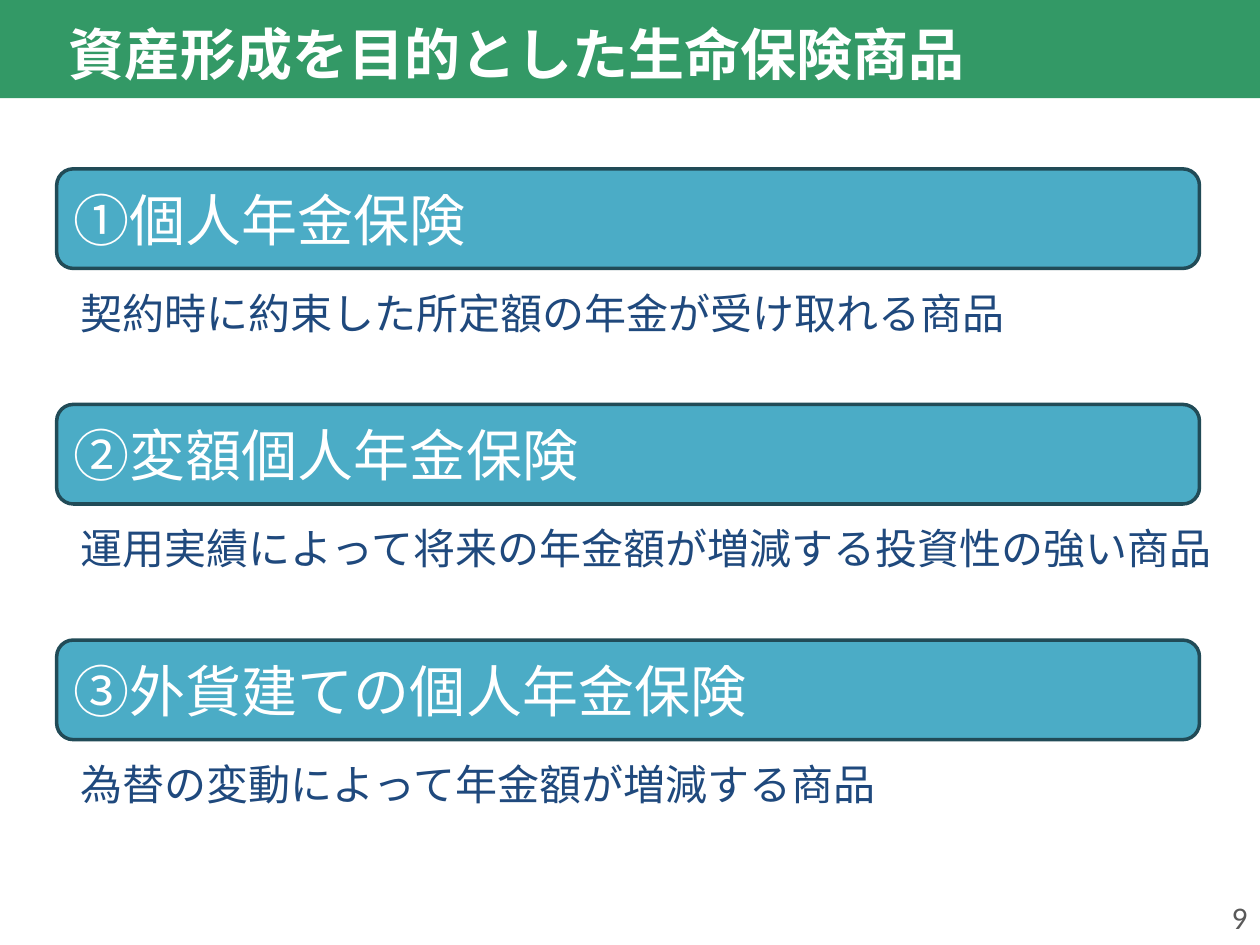
from dataclasses import dataclass

from lxml import etree
from pptx import Presentation
from pptx import util as u
from pptx.dml.color import RGBColor
from pptx.enum import shapes, text
from pptx.oxml.ns import qn

WIDE, HIGH = 10, 7.5
SANS = "Noto Sans CJK JP"
LEFT, TOP, STEP = 0.45, 1.34, 1.87  # left edge, first row, row pitch
BAR_W, BAR_H = 9.07, 0.79


@dataclass
class Box:
    x: float
    y: float
    w: float
    h: float

    def emu(self) -> list:
        return [u.Inches(v) for v in (self.x, self.y, self.w, self.h)]


@dataclass
class Item:
    head: str
    note: str
    note_w: float


ITEMS = [
    Item("①個人年金保険", "契約時に約束した所定額の年金が受け取れる商品", 9.37),
    Item("②変額個人年金保険", "運用実績によって将来の年金額が増減する投資性の強い商品", 9.91),
    Item("③外貨建ての個人年金保険", "為替の変動によって年金額が増減する商品", 9.91),
]

HEAD = {"size": u.Pt(32), "bold": False, "name": SANS}
TITLE = {**HEAD, "bold": True}
NOTE = {**HEAD, "size": u.Pt(24)}
PAGE = {**HEAD, "size": u.Pt(18), "name": "Calibri"}


def paint(target, tone: str) -> None:
    """Give a fill, or the fill of a line, one solid colour."""
    target.solid()
    target.fore_color.rgb = RGBColor.from_string(tone)


def write(shape, words: str, form: dict, tone: str,
          align=text.PP_ALIGN.LEFT, anchor=text.MSO_ANCHOR.MIDDLE) -> None:
    frame = shape.text_frame
    frame.word_wrap = True
    frame.vertical_anchor = anchor
    para = frame.paragraphs[0]
    para.alignment = align
    run = para.add_run()
    run.text = words
    paint(run.font.fill, tone)
    for key, value in form.items():
        setattr(run.font, key, value)
    # East Asian typeface follows the Latin one
    etree.SubElement(run.font._element, qn("a:ea"), typeface=form["name"])


def block(slide, kind, box: Box, tone: str, edge: str = ""):
    shape = slide.shapes.add_shape(kind, *box.emu())
    shape.shadow.inherit = False
    paint(shape.fill, tone)
    if edge:
        paint(shape.line.fill, edge)
        shape.line.width = u.Pt(2)
    else:
        shape.line.fill.background()
    return shape


def label(slide, box: Box, words: str, form: dict, tone: str, **place) -> None:
    write(slide.shapes.add_textbox(*box.emu()), words, form, tone, **place)


def draw(slide, row: int, item: Item) -> None:
    """One rounded heading bar with its note below."""
    y = TOP + row * STEP
    bar = block(slide, shapes.MSO_SHAPE.ROUNDED_RECTANGLE,
                Box(LEFT, y, BAR_W, BAR_H), "4BACC6", "214B57")
    write(bar, item.head, HEAD, "FFFFFF")
    label(slide, Box(LEFT + 0.09, y + 0.89, item.note_w, 0.5), item.note,
          NOTE, "1F497D", anchor=text.MSO_ANCHOR.TOP)


def main() -> None:
    deck = Presentation()
    deck.slide_width, deck.slide_height = u.Inches(WIDE), u.Inches(HIGH)
    slide = deck.slides.add_slide(deck.slide_layouts[6])

    # Title band, text indented by one character
    band = block(slide, shapes.MSO_SHAPE.RECTANGLE, Box(0, 0, WIDE, 0.78), "339966")
    write(band, "資産形成を目的とした生命保険商品", TITLE, "FFFFFF")
    band.text_frame.margin_left = u.Inches(0.54)
    band.text_frame.margin_top = u.Inches(0.12)

    # Three products
    for row, item in enumerate(ITEMS):
        draw(slide, row, item)

    # Page number
    label(slide, Box(WIDE - 2.33, 7.08, 2.33, 0.4), "9", PAGE, "595959",
          align=text.PP_ALIGN.RIGHT)

    deck.save("out.pptx")


if __name__ == "__main__":
    main()
